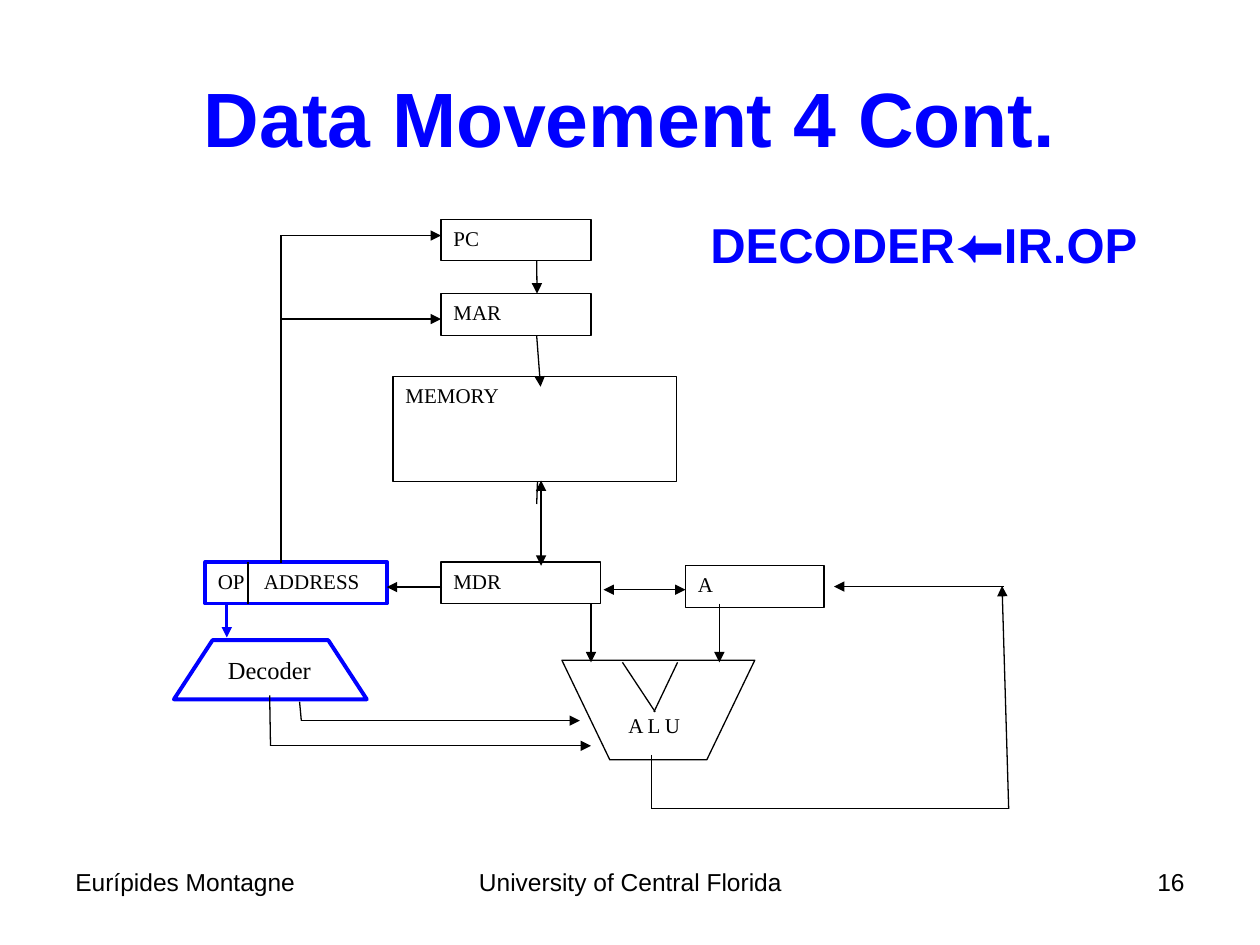
from dataclasses import dataclass

from lxml import etree
from pptx import Presentation
from pptx.dml.color import RGBColor
from pptx.enum.shapes import MSO_CONNECTOR, MSO_SHAPE
from pptx.enum.text import MSO_ANCHOR, PP_ALIGN
from pptx.oxml.ns import qn
from pptx.util import Pt

RECT = MSO_SHAPE.RECTANGLE
TRAPEZOID = MSO_SHAPE.FLOWCHART_MANUAL_OPERATION
STRAIGHT = MSO_CONNECTOR.STRAIGHT
LEFT, CENTER, RIGHT = PP_ALIGN.LEFT, PP_ALIGN.CENTER, PP_ALIGN.RIGHT
TOP, MIDDLE, BOTTOM = MSO_ANCHOR.TOP, MSO_ANCHOR.MIDDLE, MSO_ANCHOR.BOTTOM
COLORS = {"ink": "000000", "active": "0000FF", "paper": "FFFFFF"}
SANS, SERIF = "Arial", "Times New Roman"
THIN, MEDIUM, THICK = 0.75, 1.5, 2.25
REGISTER_HEIGHT = 23.8


@dataclass
class Block:
    label: str
    left: float
    top: float
    width: float
    height: float = REGISTER_HEIGHT
    color: str = "ink"
    weight: float = THIN


@dataclass
class Wire:
    x1: float
    y1: float
    x2: float
    y2: float
    heads: tuple = ()
    color: str = "ink"
    weight: float = THIN


@dataclass
class Caption:
    text: str
    left: float
    top: float
    width: float
    height: float
    size: float = 14
    font: str = SANS
    align: PP_ALIGN = LEFT
    color: str = "ink"
    bold: bool = False
    space_before: float = 0


TO, BOTH = ("tailEnd",), ("headEnd", "tailEnd")

INSTRUCTION_REGISTER = Block("OP\tADDRESS", 117.4, 321.1, 103.7, color="active", weight=THICK)
BLOCKS = [
    Block("PC", 252, 125.3, 85.7),
    Block("MAR", 252, 167.8, 85.7),
    Block("MDR", 252, 321.1, 91.4),
    INSTRUCTION_REGISTER,
    Block("MEMORY", 224.6, 215.3, 162, 59.8),
    Block("A", 391.7, 323.3, 79.2),
]
ADDRESS_TAB = 26.3
ALU_OUTLINE = [(321.1, 377.3), (348.5, 434.2), (403.9, 434.2), (431.3, 377.3)]
MEMORY_STUB = Wire(306.7, 288, 307.4, 267.8, TO)
WIRES = [
    # PC to MAR to memory, and memory with MDR
    Wire(306.7, 149, 306.9, 167.8, TO),
    Wire(306.7, 192, 308.9, 221, TO),
    Wire(309.2, 274.6, 309.2, 323.3, BOTH),
    # Address field back to PC and MAR
    Wire(160.6, 321.8, 160.6, 134.3),
    Wire(160.6, 134.6, 252, 134.6, TO),
    Wire(160.6, 182.3, 252, 182.3, TO),
    # MDR to the instruction register, and MDR with A
    Wire(252.7, 335.5, 221, 335.5, TO),
    Wire(344.9, 337, 391.7, 337, BOTH),
    # Notch and inputs of the ALU
    Wire(355.7, 378.5, 374.4, 406.8),
    Wire(387.2, 378.5, 373.7, 406.8),
    Wire(337.7, 344.9, 337.7, 378.5, TO),
    Wire(411.1, 344.9, 411.1, 378.5, TO),
    # Opcode field to the decoder
    Wire(141.8, 321.1, 141.8, 344.9),
    Wire(129.6, 344.9, 129.6, 364.3, TO, "active", MEDIUM),
    # Decoder to the ALU
    Wire(171.2, 401, 172.2, 411.8),
    Wire(172.2, 411.8, 331.4, 411.8, TO),
    Wire(154.1, 397.4, 154.6, 426.2),
    Wire(154.6, 426.2, 337.7, 426.2, TO),
    # ALU result back to A
    Wire(372.2, 431.3, 372.2, 462.2),
    Wire(372.2, 462.2, 576.4, 462.2),
    Wire(576.4, 462.2, 572.6, 334.8, TO),
    Wire(573.6, 335.2, 476.6, 335.2, TO),
]
CAPTIONS = [
    Caption("Eurípides Montagne", 36, 491.8, 167.8, 37.4),
    Caption("University of Central Florida", 246.2, 491.8, 228.2, 37.4, align=CENTER),
    Caption("16", 516.2, 491.8, 167.8, 37.4, align=RIGHT),
    Caption("DECODER⬅IR.OP", 398.9, 118.8, 266.4, 81.4, 28,
            color="active", bold=True, space_before=7),
    Caption("Decoder", 123.1, 370.8, 66.2, 24.5, font=SERIF),
]


def rgb(name: str) -> RGBColor:
    return RGBColor.from_string(COLORS[name])


def write(shape, text: str, size: float, font: str, color: str = "ink",
          align: PP_ALIGN = LEFT, anchor: MSO_ANCHOR = TOP, bold: bool = False):
    """Fill the shape with one formatted paragraph and return the paragraph."""
    frame = shape.text_frame
    frame.word_wrap = True
    frame.vertical_anchor = anchor
    frame.text = text
    paragraph = frame.paragraphs[0]
    paragraph.alignment = align
    paragraph.font.name = font
    paragraph.font.size = Pt(size)
    paragraph.font.bold = bold
    paragraph.font.color.rgb = rgb(color)
    return paragraph


def outline(shape, color: str, weight: float) -> None:
    shape.shadow.inherit = False
    shape.fill.solid()
    shape.fill.fore_color.rgb = rgb("paper")
    shape.line.color.rgb = rgb(color)
    shape.line.width = Pt(weight)


def add_block(slide, block: Block, kind: MSO_SHAPE = RECT):
    shape = slide.shapes.add_shape(
        kind, Pt(block.left), Pt(block.top), Pt(block.width), Pt(block.height))
    outline(shape, block.color, block.weight)
    if block.label:
        paragraph = write(shape, block.label, 12, SERIF)
        if "\t" in block.label:
            add_tab_stop(paragraph, ADDRESS_TAB)
    return shape


def add_tab_stop(paragraph, position: float) -> None:
    properties = paragraph.font._element.getparent()
    stops = etree.Element(qn("a:tabLst"))
    etree.SubElement(stops, qn("a:tab"), pos=str(Pt(position)), algn="l")
    properties.insert(0, stops)


def add_wire(slide, wire: Wire) -> None:
    connector = slide.shapes.add_connector(
        STRAIGHT, Pt(wire.x1), Pt(wire.y1), Pt(wire.x2), Pt(wire.y2))
    connector.line.color.rgb = rgb(wire.color)
    connector.line.width = Pt(wire.weight)
    properties = connector._element.spPr
    etree.SubElement(properties, qn("a:effectLst"))
    for head in wire.heads:
        etree.SubElement(properties.find(qn("a:ln")), qn(f"a:{head}"), type="triangle")


def add_alu(slide) -> None:
    start, *corners = [(Pt(x), Pt(y)) for x, y in ALU_OUTLINE]
    builder = slide.shapes.build_freeform(*start)
    builder.add_line_segments(corners, close=True)
    alu = builder.convert_to_shape()
    outline(alu, "ink", THIN)
    write(alu, "A L U", 12, SERIF, anchor=BOTTOM)
    alu.text_frame.margin_left = Pt(38)
    alu.text_frame.margin_bottom = Pt(12.5)


def add_caption(slide, caption: Caption) -> None:
    box = slide.shapes.add_textbox(
        Pt(caption.left), Pt(caption.top), Pt(caption.width), Pt(caption.height))
    paragraph = write(box, caption.text, caption.size, caption.font,
                      caption.color, caption.align, bold=caption.bold)
    paragraph.space_before = Pt(caption.space_before)


def main() -> None:
    deck = Presentation()
    deck.slide_width, deck.slide_height = Pt(720), Pt(540)
    slide = deck.slides.add_slide(deck.slide_layouts[5])

    title = slide.shapes.title
    title.left, title.top, title.width, title.height = Pt(36), Pt(21.6), Pt(648), Pt(90)
    write(title, "Data Movement 4 Cont.", 44, SANS, "active", CENTER, MIDDLE, True)

    add_wire(slide, MEMORY_STUB)
    for block in BLOCKS:
        add_block(slide, block)
    add_alu(slide)
    decoder = Block("", 99.4, 365.8, 110.2, 33.8, "active", THICK)
    add_block(slide, decoder, TRAPEZOID).rotation = 180
    for wire in WIRES:
        add_wire(slide, wire)
    for caption in CAPTIONS:
        add_caption(slide, caption)
    deck.save("out.pptx")


if __name__ == "__main__":
    main()
